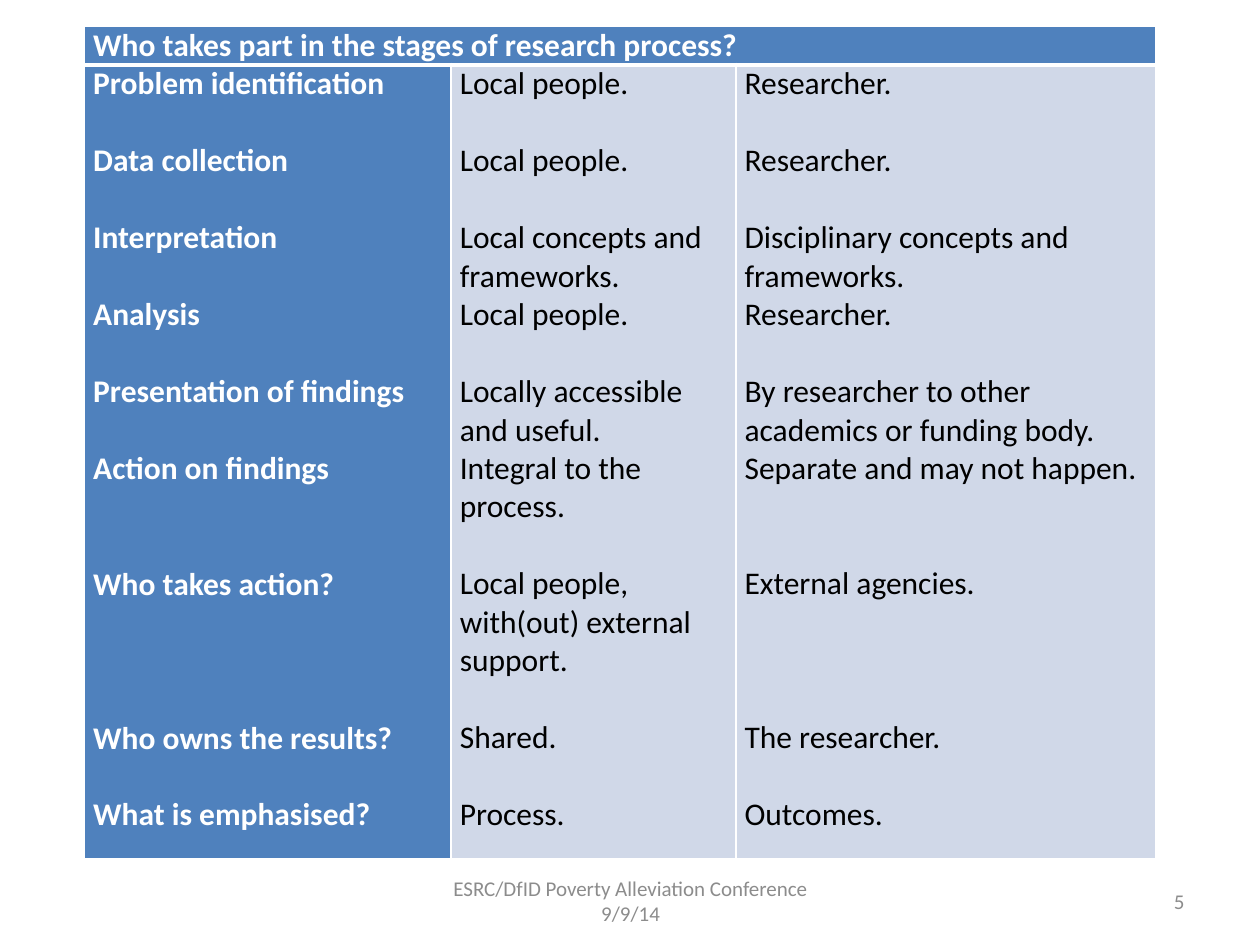
"""Build a slide with a table comparing who takes part in each research stage."""
from dataclasses import dataclass

from lxml.etree import SubElement
from pptx import Presentation
from pptx.dml.color import RGBColor
from pptx.enum.text import MSO_ANCHOR as Anchor, PP_ALIGN as Align
from pptx.oxml.ns import qn
from pptx.util import Inches, Pt

BLUE, PALE, WHITE, BLACK, GREY = "4F81BD", "D0D8E8", "FFFFFF", "000000", "8C8C8C"
LINE_PITCH = 22
COLUMN_WIDTHS = (2.91, 2.26, 3.33)
ROW_HEIGHTS = (0.3, 6.3)


@dataclass
class Stage:
    """A research stage, its depth in lines, and the lines each answer fills."""
    name: str
    local: str
    researcher: str
    depth: int = 2
    local_lines: int = 1
    researcher_lines: int = 1


STAGES = (
    Stage("Problem identification", "Local people.", "Researcher."),
    Stage("Data collection", "Local people.", "Researcher."),
    Stage("Interpretation", "Local concepts and frameworks.",
          "Disciplinary concepts and frameworks.", local_lines=2, researcher_lines=2),
    Stage("Analysis", "Local people.", "Researcher."),
    Stage("Presentation of findings", "Locally accessible and useful.",
          "By researcher to other academics or funding body.",
          local_lines=2, researcher_lines=2),
    Stage("Action on findings", "Integral to the process.",
          "Separate and may not happen.", depth=3, local_lines=2),
    Stage("Who takes action?", "Local people, with(out) external support.",
          "External agencies.", depth=4, local_lines=3),
    Stage("Who owns the results?", "Shared.", "The researcher."),
    Stage("What is emphasised?", "Process.", "Outcomes.", depth=1),
)


def rgb(value: str) -> RGBColor:
    """Turn a hex string into a colour."""
    return RGBColor.from_string(value)


def write(frame, text: str, *, size=18, color=BLACK, bold=False,
          align=Align.LEFT, after=0) -> None:
    """Write one formatted paragraph, reusing an empty first paragraph."""
    para = frame.paragraphs[-1]
    if para.runs:
        para = frame.add_paragraph()
    para.alignment = align
    para.space_after = Pt(after)
    span = para.add_run()
    span.text = text
    span.font.name = "Calibri"
    span.font.size = Pt(size)
    span.font.bold = bold
    span.font.color.rgb = rgb(color)


def style_cell(cell, fill: str, **borders: float) -> None:
    """Set the margins, white borders and fill of a cell."""
    cell.margin_left = cell.margin_right = Inches(0.07)
    cell.margin_top = cell.margin_bottom = 0
    properties = cell._tc.get_or_add_tcPr()
    for side in "LRTB":
        line = SubElement(properties, qn(f"a:ln{side}"), w=str(Pt(borders.get(side, 1))))
        paint = SubElement(line, qn("a:solidFill"))
        SubElement(paint, qn("a:srgbClr"), val=WHITE)
    cell.fill.solid()
    cell.fill.fore_color.rgb = rgb(fill)


def add_stage_table(page) -> None:
    """Add the table of stages with its merged heading."""
    table = page.shapes.add_table(
        2, 3, Inches(0.67), Inches(0.21),
        Inches(sum(COLUMN_WIDTHS)), Inches(sum(ROW_HEIGHTS))).table
    for column, width in zip(table.columns, COLUMN_WIDTHS):
        column.width = Inches(width)
    for row, height in zip(table.rows, ROW_HEIGHTS):
        row.height = Inches(height)
    for index, fill in enumerate((BLUE, PALE, PALE)):
        style_cell(table.cell(0, index), BLUE, B=3)
        style_cell(table.cell(1, index), fill, T=3)
    heading = table.cell(0, 0)
    heading.merge(table.cell(0, 2))
    write(heading.text_frame, "Who takes part in the stages of research process?",
          color=WHITE, bold=True)
    names, locals_, researchers = (cell.text_frame for cell in table.rows[1].cells)
    for stage in STAGES:
        write(names, stage.name, color=WHITE, bold=True,
              after=(stage.depth - 1) * LINE_PITCH)
        write(locals_, stage.local,
              after=(stage.depth - stage.local_lines) * LINE_PITCH)
        write(researchers, stage.researcher,
              after=(stage.depth - stage.researcher_lines) * LINE_PITCH)


def add_footer(page, text: str, left: float, width: float, align: Align) -> None:
    """Add a small grey text box at the foot of the page."""
    box = page.shapes.add_textbox(Inches(left), Inches(6.95), Inches(width), Inches(0.4))
    frame = box.text_frame
    frame.word_wrap = True
    frame.vertical_anchor = Anchor.MIDDLE
    write(frame, text, size=12, color=GREY, align=align)


def main() -> None:
    """Build and save the deck."""
    deck = Presentation()
    deck.slide_width, deck.slide_height = Inches(10), Inches(7.5)
    page = deck.slides.add_slide(deck.slide_layouts[6])
    add_stage_table(page)
    add_footer(page, "5", 7.17, 2.33, Align.RIGHT)
    add_footer(page, "ESRC/DfID Poverty Alleviation Conference 9/9/14",
               3.42, 3.17, Align.CENTER)
    deck.save("out.pptx")


if __name__ == "__main__":
    main()
